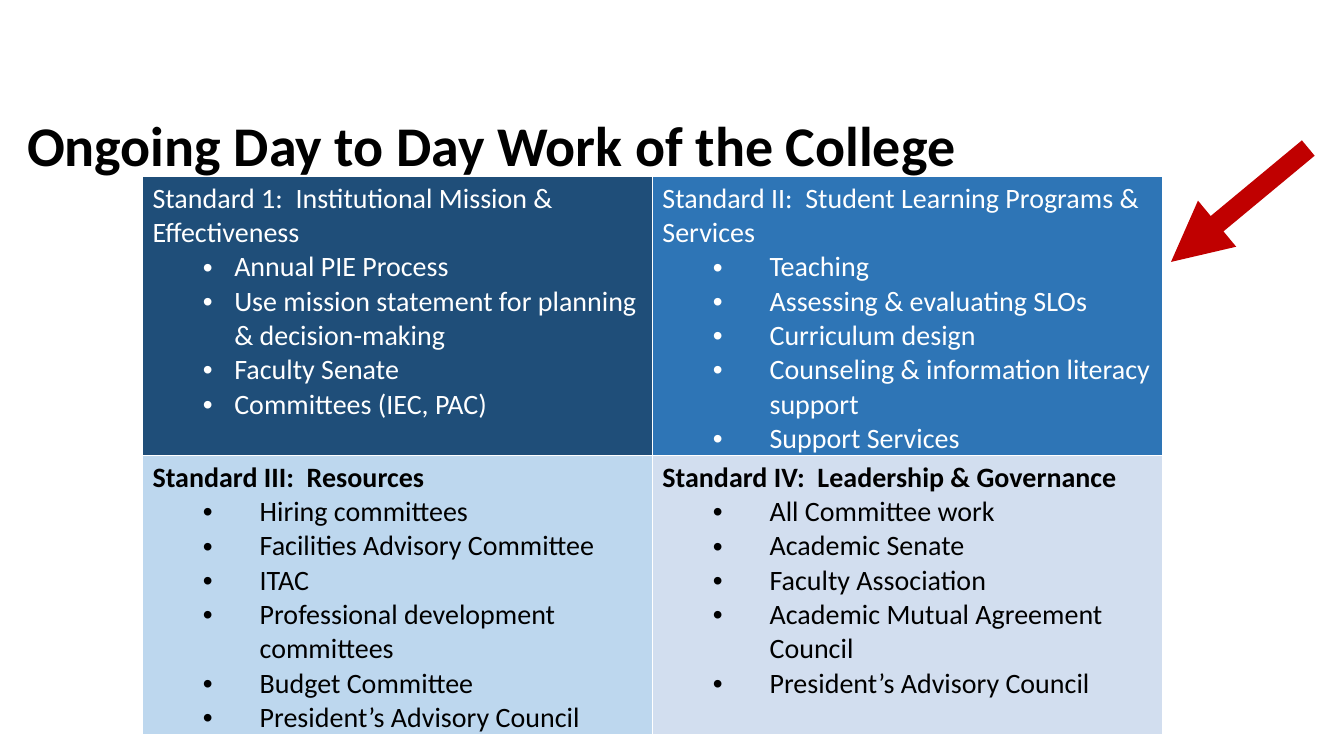
"""Build the slide on the college's ongoing work by accreditation standard."""
from lxml.etree import SubElement
from pptx import Presentation
from pptx.dml.color import RGBColor
from pptx.enum.shapes import MSO_CONNECTOR
from pptx.enum.text import MSO_ANCHOR, PP_ALIGN
from pptx.oxml.ns import qn
from pptx.util import Cm, Pt

TITLE = "Ongoing Day to Day Work of the College"
STANDARDS = [
    [
        ("Standard 1:  Institutional Mission & Effectiveness", [
            "Annual PIE Process",
            "Use mission statement for planning & decision-making",
            "Faculty Senate",
            "Committees (IEC, PAC)",
        ]),
        ("Standard II:  Student Learning Programs & Services", [
            "Teaching",
            "Assessing & evaluating SLOs",
            "Curriculum design",
            "Counseling & information literacy support",
            "Support Services",
        ]),
    ],
    [
        ("Standard III:  Resources", [
            "Hiring committees",
            "Facilities Advisory Committee",
            "ITAC",
            "Professional development committees",
            "Budget Committee",
            "President’s Advisory Council",
        ]),
        ("Standard IV:  Leadership & Governance", [
            "All Committee work",
            "Academic Senate",
            "Faculty Association",
            "Academic Mutual Agreement Council",
            "President’s Advisory Council",
        ]),
    ],
]
THEME = {
    "font": "Calibri",
    "title_size": Pt(40),
    "body_size": Pt(20),
    "border_width": Pt(1),
    "arrow_width": Pt(14.25),
    "black": "000000",
    "white": "FFFFFF",
    "arrow": "C00000",
    "fills": [["1F4E79", "2E75B6"], ["BDD7EE", "D2DEEF"]],
    "row_text": ["FFFFFF", "000000"],
    "row_bold": [False, True],
}
BULLET_START = Cm(1.27)
NARROW_HANG, WIDE_HANG = Cm(0.79), Cm(1.43)
COLUMN_WIDTH, ROW_HEIGHT = Cm(12.85), Cm(6.78)


def add_span(para, text, size, color, bold):
    span = para.add_run()
    span.text = text
    span.font.name = THEME["font"]
    span.font.size = size
    span.font.bold = bold
    span.font.color.rgb = RGBColor.from_string(color)


def set_bullet(para, hang):
    para.level = 1
    properties = para._p.get_or_add_pPr()
    properties.set("marL", str(BULLET_START + hang))
    properties.set("indent", str(-hang))
    SubElement(properties, qn("a:buFont"), typeface="Arial")
    SubElement(properties, qn("a:buChar"), char="•")


def set_borders(cell):
    properties = cell._tc.get_or_add_tcPr()
    for side in ("lnL", "lnR", "lnT", "lnB"):
        line = SubElement(properties, qn(f"a:{side}"), w=str(THEME["border_width"]))
        fill = SubElement(line, qn("a:solidFill"))
        SubElement(fill, qn("a:srgbClr"), val=THEME["white"])


def fill_cell(cell, row, column):
    heading, items = STANDARDS[row][column]
    color, size = THEME["row_text"][row], THEME["body_size"]
    hang = NARROW_HANG if row == column == 0 else WIDE_HANG
    set_borders(cell)
    cell.fill.solid()
    cell.fill.fore_color.rgb = RGBColor.from_string(THEME["fills"][row][column])
    add_span(cell.text_frame.paragraphs[0], heading, size, color, THEME["row_bold"][row])
    for item in items:
        para = cell.text_frame.add_paragraph()
        set_bullet(para, hang)
        add_span(para, item, size, color, False)


def add_title(page):
    box = page.shapes.add_textbox(Cm(-2.9), Cm(2.77), Cm(30.56), Cm(1.93))
    box.text_frame.word_wrap = True
    box.text_frame.vertical_anchor = MSO_ANCHOR.MIDDLE
    para = box.text_frame.paragraphs[0]
    para.alignment = PP_ALIGN.CENTER
    para.line_spacing = 0.9
    add_span(para, TITLE, THEME["title_size"], THEME["black"], True)


def add_standards(page):
    rows, columns = len(STANDARDS), len(STANDARDS[0])
    table = page.shapes.add_table(rows, columns, Cm(3.59), Cm(4.45),
                                  COLUMN_WIDTH * columns, ROW_HEIGHT * rows).table
    table.first_row = False
    table.horz_banding = False
    for row in range(rows):
        for column in range(columns):
            fill_cell(table.cell(row, column), row, column)


def add_arrow(page):
    arrow = page.shapes.add_connector(MSO_CONNECTOR.STRAIGHT,
                                      Cm(32.97), Cm(3.73), Cm(29.51), Cm(6.6))
    arrow.line.color.rgb = RGBColor.from_string(THEME["arrow"])
    arrow.line.width = THEME["arrow_width"]
    SubElement(arrow.line._get_or_add_ln(), qn("a:tailEnd"), type="triangle")
    SubElement(arrow._element.spPr, qn("a:effectLst"))


def main():
    deck = Presentation()
    deck.slide_width, deck.slide_height = Cm(33.87), Cm(19.05)
    page = deck.slides.add_slide(deck.slide_layouts[6])
    add_title(page)
    add_standards(page)
    add_arrow(page)
    deck.save("out.pptx")


if __name__ == "__main__":
    main()
